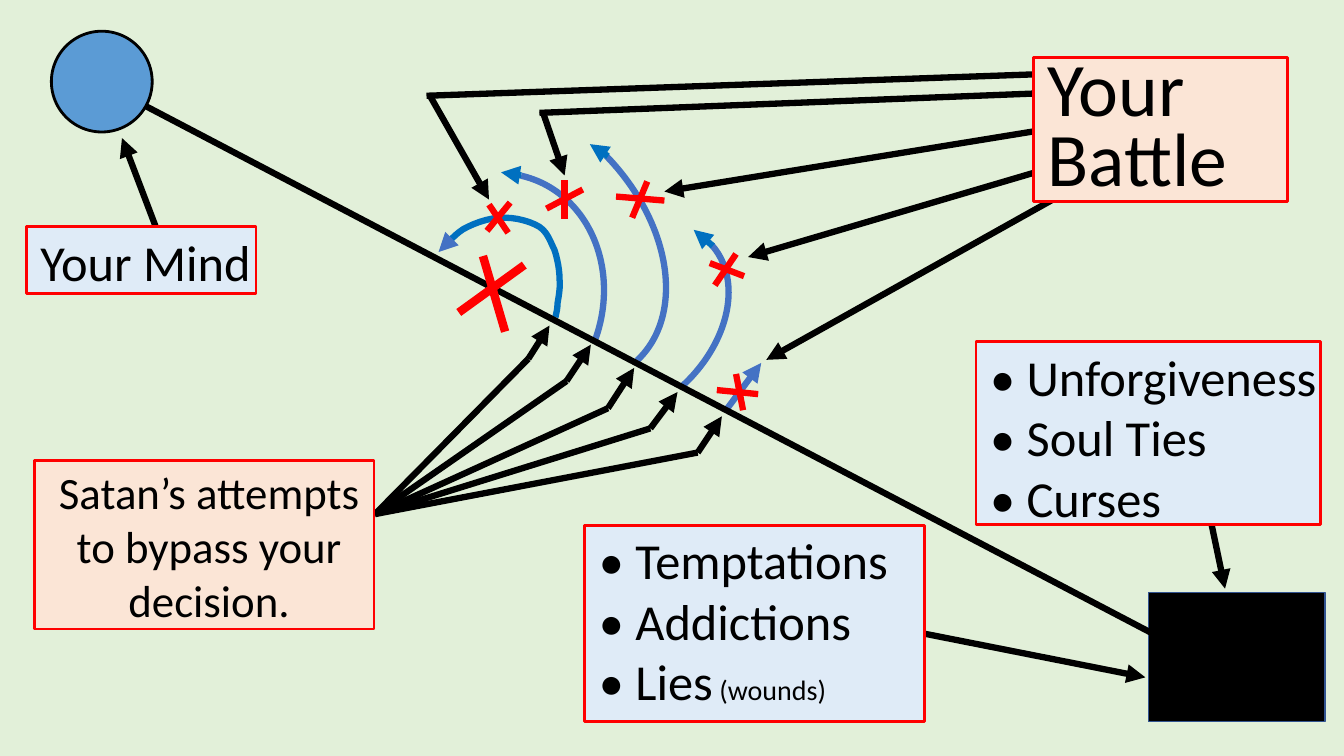
from dataclasses import dataclass
from itertools import pairwise

from lxml import etree
from pptx import Presentation
from pptx.dml.color import RGBColor
from pptx.enum.shapes import MSO_CONNECTOR, MSO_SHAPE
from pptx.enum.text import MSO_ANCHOR, PP_ALIGN
from pptx.oxml.ns import qn
from pptx.util import Inches, Pt

RECT, OVAL, ARC = MSO_SHAPE.RECTANGLE, MSO_SHAPE.OVAL, MSO_SHAPE.ARC
STRAIGHT = MSO_CONNECTOR.STRAIGHT
TOP, LEFT, CENTER = MSO_ANCHOR.TOP, PP_ALIGN.LEFT, PP_ALIGN.CENTER

BLACK = RGBColor(0x00, 0x00, 0x00)
RED = RGBColor(0xFF, 0x00, 0x00)
GREEN = RGBColor(0xE2, 0xF0, 0xD9)
PALE = RGBColor(0xDF, 0xEB, 0xF7)
PEACH = RGBColor(0xFB, 0xE5, 0xD6)
SKY = RGBColor(0x5B, 0x9B, 0xD5)
BLUE = RGBColor(0x44, 0x72, 0xC4)
DEEP = RGBColor(0x00, 0x70, 0xC0)
NAVY = RGBColor(0x32, 0x54, 0x91)
FONT = "Calibri"

Point = tuple[float, float]
Frame = tuple[float, float, float, float]


@dataclass
class Line:
    start: Point
    end: Point
    color: RGBColor = BLACK
    width: float = 4.5
    arrow: bool = True


@dataclass
class Box:
    frame: Frame
    text: str
    fill: RGBColor = PALE
    size: int = 36
    align: PP_ALIGN = LEFT
    pitch: int | None = None
    note: str = ""


@dataclass
class Arc:
    frame: Frame
    turn: float
    begin: float = 162
    stop: float = 0


@dataclass
class Cross:
    first: tuple[Point, Point]
    second: tuple[Point, Point]
    width: float = 4.5


ROOT = (3.72, 5.1)
# Knee and tip of each bent arrow that leaves the root
ATTEMPTS = [
    ((5.24, 3.56), (5.45, 3.23)),
    ((5.62, 3.78), (5.86, 3.42)),
    ((6.03, 4.05), (6.29, 3.65)),
    ((6.45, 4.25), (6.72, 3.89)),
    ((6.92, 4.49), (7.16, 4.13)),
]
LINKS = [
    Line((11.97, 4.98), (12.15, 5.84)),
    Line((1.72, 2.71), (1.21, 1.37)),
    Line((8.68, 6.19), (11.36, 6.72)),
    Line((10.55, 1.92), (7.6, 3.57)),
    Line((10.37, 1.68), (7.42, 2.55)),
    Line((10.46, 1.27), (6.59, 1.9)),
    Line((5.38, 1.1), (5.6, 1.74)),
    Line((4.27, 0.96), (4.85, 1.98)),
    Line((4.23, 0.95), (10.48, 0.73), arrow=False),
    Line((5.35, 1.12), (10.47, 0.92), arrow=False),
]
BOXES = [
    Box((9.68, 3.39, 3.42, 1.81), "• Unforgiveness\n• Soul Ties\n• Curses"),
    Box((0.26, 2.25, 2.28, 0.66), "Your Mind"),
    Box((5.8, 5.21, 3.37, 1.95), "• Temptations\n• Addictions\n• Lies",
        note=" (wounds)"),
    Box((0.34, 4.57, 3.37, 1.67), "Satan’s attempts\nto bypass your\ndecision.",
        PEACH, 32, CENTER),
    Box((10.25, 0.57, 2.52, 1.43), "Your\nBattle", PEACH, 54, pitch=50),
]
ARCS = [
    Arc((3.5, 1.19, 3.34, 2.35), 45.9, stop=0.37),
    Arc((3.72, 1.7, 2.25, 2.58), 20.1, 158.7, 0.37),
    Arc((5.36, 2.05, 1.68, 2.32), 47.5),
]
# Bezier points: a start, then two handles and an end for each piece
CURVE = [
    (4.43, 2.42), (4.49, 2.36), (4.55, 2.29), (4.64, 2.25),
    (4.74, 2.2), (4.9, 2.15), (5.01, 2.16),
    (5.13, 2.16), (5.27, 2.2), (5.35, 2.25),
    (5.43, 2.3), (5.46, 2.4), (5.5, 2.48),
    (5.53, 2.57), (5.55, 2.68), (5.55, 2.77),
    (5.56, 2.85), (5.54, 2.95), (5.53, 3.01),
    (5.53, 3.08), (5.51, 3.13), (5.51, 3.15),
]
HEADS = [
    Line((4.43, 2.42), (4.35, 2.5), BLUE),
    Line((5.17, 1.74), (4.97, 1.71), DEEP),
    Line((6.03, 1.55), (5.85, 1.43), DEEP),
    Line((7.07, 2.44), (6.88, 2.28), DEEP),
    Line((7.2, 4.07), (7.55, 3.6), BLUE),
]
CROSSES = [
    Cross(((5.04, 2.31), (4.85, 2.03)), ((4.83, 2.29), (5.06, 2.01))),
    Cross(((7.52, 3.91), (7.11, 3.87)), ((7.37, 4.07), (7.3, 3.71))),
    Cross(((7.38, 2.74), (7.04, 2.61)), ((7.09, 2.83), (7.3, 2.52))),
    Cross(((6.27, 2.16), (6.42, 1.8)), ((6.59, 1.99), (6.11, 1.95))),
    Cross(((5.42, 2.07), (5.78, 1.88)), ((5.6, 2.17), (5.6, 1.79))),
    Cross(((5.01, 3.29), (4.79, 2.54)), ((5.2, 2.63), (4.55, 3.1)), 6),
]


def style(shape, fill: RGBColor | None, color: RGBColor, width: float) -> None:
    shape.shadow.inherit = False
    if fill is None:
        shape.fill.background()
    else:
        shape.fill.solid()
        shape.fill.fore_color.rgb = fill
    shape.line.color.rgb = color
    shape.line.width = Pt(width)


def add_shape(slide, kind, frame: Frame, fill, color, width):
    shape = slide.shapes.add_shape(kind, *map(Inches, frame))
    style(shape, fill, color, width)
    return shape


def draw_line(slide, line: Line) -> None:
    link = slide.shapes.add_connector(STRAIGHT, *map(Inches, line.start + line.end))
    link.line.color.rgb = line.color
    link.line.width = Pt(line.width)
    if line.arrow:
        etree.SubElement(link.line._get_or_add_ln(), qn("a:tailEnd"), type="triangle")
    etree.SubElement(link._element.spPr, qn("a:effectLst"))


def draw_box(slide, box: Box) -> None:
    frame = add_shape(slide, RECT, box.frame, box.fill, RED, 2).text_frame
    frame.word_wrap = True
    frame.vertical_anchor = TOP
    frame.margin_left = frame.margin_right = Inches(0.04)
    frame.margin_top = frame.margin_bottom = Inches(0.04)
    frame.text = box.text
    for para in frame.paragraphs:
        para._p.get_or_add_pPr().set("marL", str(Inches(0.1)))
        para.alignment = box.align
        if box.pitch:
            para.line_spacing = Pt(box.pitch)
        para.font.name = FONT
        para.font.size = Pt(box.size)
        para.font.color.rgb = BLACK
        for run in para.runs:
            run.font.name = FONT
            run.font.size = Pt(box.size)
            run.font.color.rgb = BLACK
    if box.note:
        run = frame.paragraphs[-1].add_run()
        run.text = box.note
        run.font.name = FONT
        run.font.size = Pt(20)
        run.font.color.rgb = BLACK


def draw_arc(slide, arc: Arc) -> None:
    shape = add_shape(slide, ARC, arc.frame, None, BLUE, 4.5)
    shape.adjustments[0] = arc.begin
    shape.adjustments[1] = arc.stop
    shape.rotation = arc.turn


def draw_curve(slide, points: list[Point], steps: int = 6) -> None:
    """Trace joined cubic Bezier pieces with short segments."""
    trace = []
    for i in range(0, len(points) - 1, 3):
        for t in (n / steps for n in range(1, steps + 1)):
            parts = ((1 - t) ** 3, 3 * t * (1 - t) ** 2, 3 * t * t * (1 - t), t ** 3)
            trace.append(tuple(
                Inches(sum(w * p[axis] for w, p in zip(parts, points[i:i + 4])))
                for axis in (0, 1)))
    pen = slide.shapes.build_freeform(*map(Inches, points[0]))
    pen.add_line_segments(trace, close=False)
    style(pen.convert_to_shape(), None, DEEP, 4.5)


def main() -> None:
    deck = Presentation()
    deck.slide_width, deck.slide_height = Inches(13.33), Inches(7.5)
    slide = deck.slides.add_slide(deck.slide_layouts[6])
    slide.background.fill.solid()
    slide.background.fill.fore_color.rgb = GREEN

    for line in LINKS:
        draw_line(slide, line)
    for knee, tip in ATTEMPTS:
        for start, end in pairwise((ROOT, knee, tip)):
            draw_line(slide, Line(start, end, arrow=end == tip))
    for box in BOXES:
        draw_box(slide, box)
    add_shape(slide, RECT, (11.39, 5.88, 1.75, 1.28), BLACK, NAVY, 1)
    for arc in ARCS:
        draw_arc(slide, arc)
    draw_curve(slide, CURVE)
    for head in HEADS:
        draw_line(slide, head)
    draw_line(slide, Line((0.81, 0.72), (12.3, 6.74), arrow=False))
    add_shape(slide, OVAL, (0.51, 0.31, 1, 1), SKY, BLACK, 2)
    for cross in CROSSES:
        for start, end in (cross.first, cross.second):
            draw_line(slide, Line(start, end, RED, cross.width, False))
    deck.save("out.pptx")


if __name__ == "__main__":
    main()
